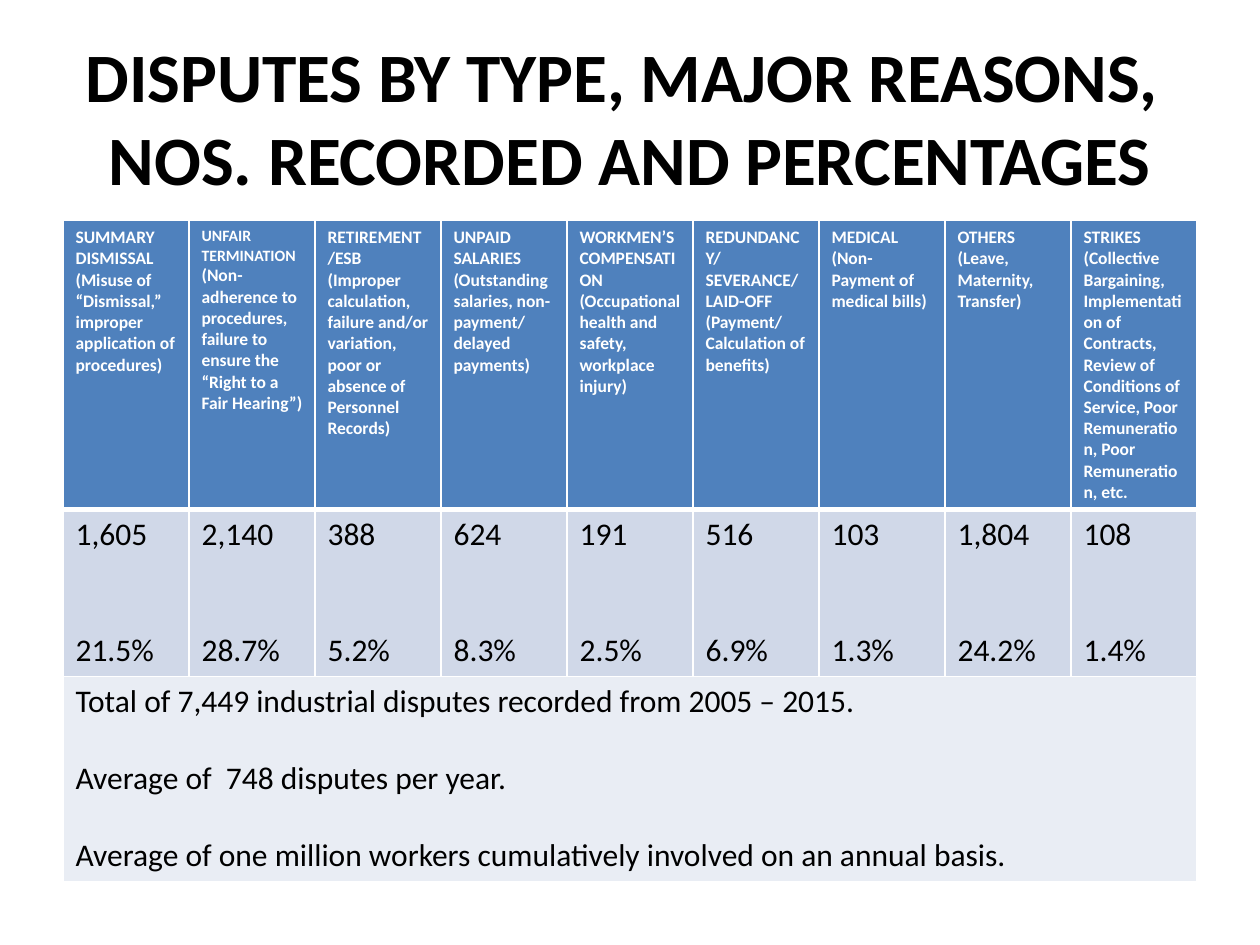
"""Build a slide with a table of industrial disputes by type."""
from lxml import etree
from pptx import Presentation
from pptx import util as u
from pptx.dml import color
from pptx.enum import text
from pptx.oxml import ns


def paint(fill, shade):
    fill.solid()
    fill.fore_color.rgb = color.RGBColor.from_string(shade)


def style_cell(cell, shade, ink, size, bold, gap=0, top=1, bottom=1):
    properties = cell._tc.get_or_add_tcPr()
    for side, width in (("L", 1), ("R", 1), ("T", top), ("B", bottom)):
        line = etree.SubElement(properties, ns.qn(f"a:ln{side}"), w=str(u.Pt(width)))
        solid = etree.SubElement(line, ns.qn("a:solidFill"))
        etree.SubElement(solid, ns.qn("a:srgbClr"), val="FFFFFF")
    paint(cell.fill, shade)
    for index, para in enumerate(cell.text_frame.paragraphs):
        para.space_before = u.Pt(gap if index else 0)
        for span in para.runs:
            span.font.name = "Calibri"
            span.font.size = u.Pt(size)
            span.font.bold = bold
            paint(span.font.fill, ink)


disputes = [
    ("SUMMARY DISMISSAL (Misuse of “Dismissal,” improper application of procedures)", "1,605", "21.5%"),
    ("UNFAIR TERMINATION ", "2,140", "28.7%"),
    ("RETIREMENT\n/ESB (Improper calculation, failure and/or variation, poor or absence of Personnel Records)",
     "388", "5.2%"),
    ("UNPAID SALARIES (Outstanding salaries, non-payment/\ndelayed payments)", "624", "8.3%"),
    ("WORKMEN’S COMPENSATION (Occupational health and safety, workplace injury)", "191", "2.5%"),
    ("REDUNDANCY/\nSEVERANCE/\nLAID-OFF (Payment/\nCalculation of benefits)", "516", "6.9%"),
    ("MEDICAL\n(Non-Payment of medical bills)", "103", "1.3%"),
    ("OTHERS\n(Leave, Maternity, Transfer)", "1,804", "24.2%"),
    ("STRIKES\n(Collective Bargaining, Implementation of Contracts, Review of Conditions of Service, "
     "Poor Remuneration, Poor Remuneration, etc.", "108", "1.4%"),
]
summary = [
    "Total of 7,449 industrial disputes recorded from 2005 – 2015.",
    "Average of  748 disputes per year.",
    "Average of one million workers cumulatively involved on an annual basis.",
]

deck = Presentation()
deck.slide_width, deck.slide_height = u.Cm(25.4), u.Cm(19.05)
page = deck.slides.add_slide(deck.slide_layouts[5])

title = page.shapes.title
title.left, title.top, title.width, title.height = u.Cm(1.27), u.Cm(0.76), u.Cm(22.86), u.Cm(3.18)
frame = title.text_frame
frame.text = "DISPUTES BY TYPE, MAJOR REASONS, \vNOS. RECORDED AND PERCENTAGES"
frame.auto_size = text.MSO_AUTO_SIZE.NONE
frame.vertical_anchor = text.MSO_ANCHOR.MIDDLE
heading = frame.paragraphs[0]
heading.alignment = text.PP_ALIGN.CENTER
for span in heading.runs:
    span.font.name = "Calibri"
    span.font.size = u.Pt(39.6)
    span.font.bold = True
    paint(span.font.fill, "000000")

heights = [5.79, 3.37, 4.13]
table = page.shapes.add_table(len(heights), len(disputes), u.Cm(1.27), u.Cm(4.45),
                              u.Cm(22.86), u.Cm(sum(heights))).table
for row, height in zip(table.rows, heights):
    row.height = u.Cm(height)

for index, (reason, count, share) in enumerate(disputes):
    table.columns[index].width = u.Cm(2.54)
    header, figures = table.cell(0, index), table.cell(1, index)
    header.text = reason
    figures.text = f"{count}\n{share}"
    style_cell(header, "4F81BD", "FFFFFF", 10, True, bottom=3)
    style_cell(figures, "D0D8E8", "000000", 18, False, gap=44, top=3)

unfair = table.cell(0, 1).text_frame.paragraphs[0]
unfair.runs[0].font.size = u.Pt(9)
detail = unfair.add_run()
detail.text = "(Non-adherence to procedures, failure to ensure the “Right to a Fair Hearing”)"
detail.font.name = "Calibri"
detail.font.size = u.Pt(10)
detail.font.bold = True
paint(detail.font.fill, "FFFFFF")

total = table.cell(2, 0)
total.merge(table.cell(2, len(disputes) - 1))
total.text = "\n".join(summary)
style_cell(total, "E9EDF4", "000000", 18, False, gap=22)

deck.save("out.pptx")
